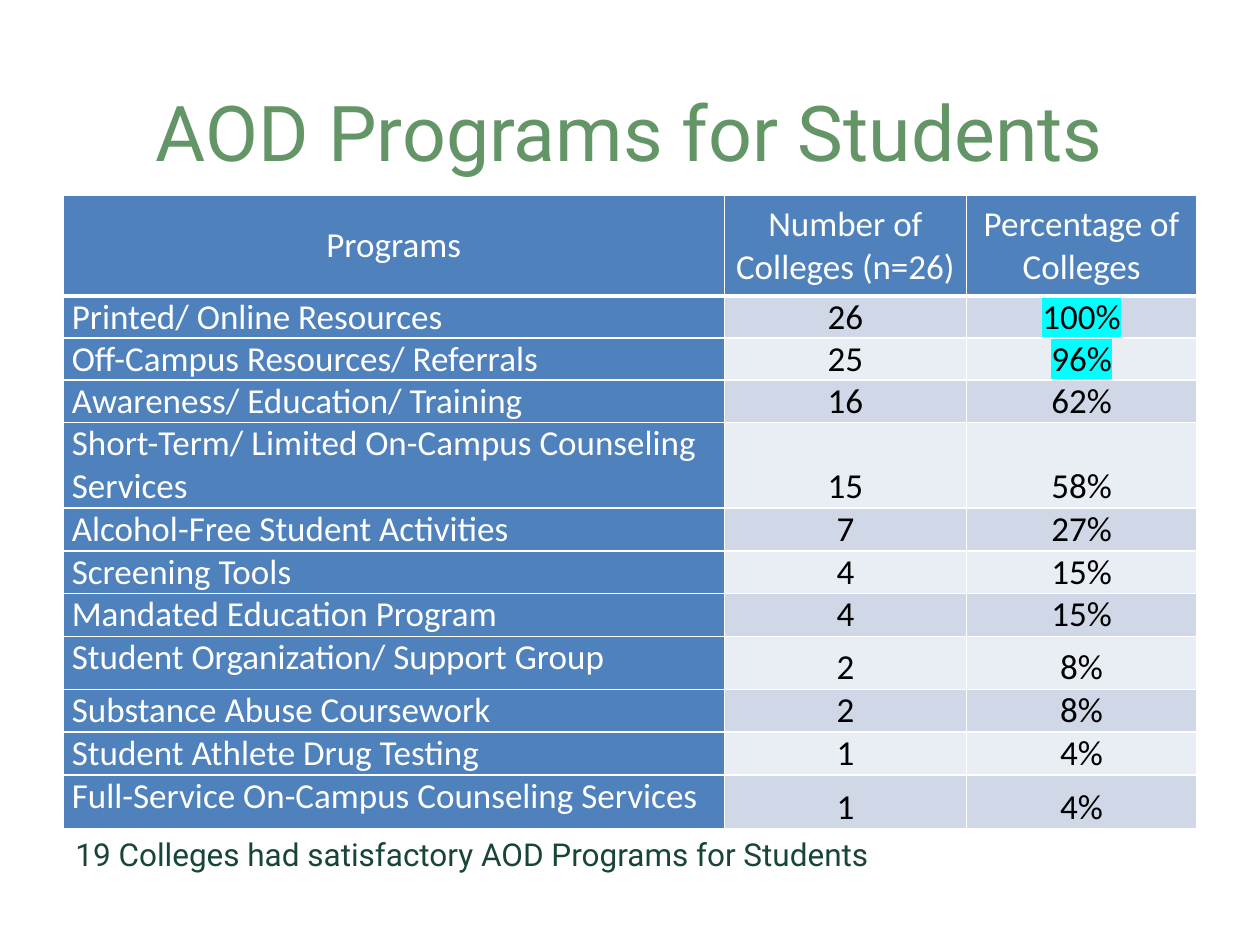
"""Build the slide on AOD programs for students."""
from dataclasses import dataclass
from itertools import product

from lxml.etree import SubElement
from pptx import Presentation
from pptx.dml.color import RGBColor
from pptx.enum.text import MSO_ANCHOR, PP_ALIGN
from pptx.oxml.ns import qn
from pptx.util import Inches, Pt

WHITE = RGBColor(0xFF, 0xFF, 0xFF)
BLACK = RGBColor(0x00, 0x00, 0x00)
BLUE = RGBColor(0x4F, 0x81, 0xBD)
BAND_DARK = RGBColor(0xD0, 0xD8, 0xE8)
BAND_LIGHT = RGBColor(0xE9, 0xED, 0xF4)
CYAN = RGBColor(0x00, 0xFF, 0xFF)
TITLE_GREEN = RGBColor(0x63, 0x95, 0x67)
NOTE_GREEN = RGBColor(0x17, 0x45, 0x3A)

MARGIN = 0.5
TABLE_TOP = 1.55
COLUMN_WIDTHS = (5.25, 1.92, 1.83)
HEADER_HEIGHT = 0.8
HEADINGS = ("Programs", "Number of Colleges (n=26)", "Percentage of Colleges")


@dataclass(frozen=True)
class TextStyle:
    font: str
    size: float
    color: RGBColor
    align: PP_ALIGN = PP_ALIGN.LEFT
    anchor: MSO_ANCHOR = MSO_ANCHOR.TOP


@dataclass(frozen=True)
class Program:
    name: str
    colleges: str
    percentage: str
    height: float = 0.34
    highlighted: bool = False


PROGRAMS = (
    Program("Printed/ Online Resources", "26", "100%", 0.3, True),
    Program("Off-Campus Resources/ Referrals", "25", "96%", 0.3, True),
    Program("Awareness/ Education/ Training", "16", "62%", 0.3),
    Program("Short-Term/ Limited On-Campus Counseling Services", "15", "58%", 0.68),
    Program("Alcohol-Free Student Activities", "7", "27%"),
    Program("Screening Tools", "4", "15%"),
    Program("Mandated Education Program", "4", "15%"),
    Program("Student Organization/ Support Group", "2", "8%", 0.42),
    Program("Substance Abuse Coursework", "2", "8%"),
    Program("Student Athlete Drug Testing", "1", "4%"),
    Program("Full-Service On-Campus Counseling Services", "1", "4%", 0.43),
)

TITLE = TextStyle("Roboto", 44, TITLE_GREEN, PP_ALIGN.CENTER, MSO_ANCHOR.MIDDLE)
NOTE = TextStyle("Roboto", 18, NOTE_GREEN)
HEADING = TextStyle("Calibri", 20, WHITE, PP_ALIGN.CENTER, MSO_ANCHOR.MIDDLE)
NAME = TextStyle("Calibri", 20, WHITE)
FIGURE = TextStyle("Calibri", 20, BLACK, PP_ALIGN.CENTER, MSO_ANCHOR.BOTTOM)


def write(text_frame, text: str, style: TextStyle):
    """Write one styled run and return it."""
    paragraph = text_frame.paragraphs[0]
    paragraph.alignment = style.align
    run = paragraph.add_run()
    run.text = text
    run.font.size = Pt(style.size)
    run.font.color.rgb = style.color
    run.font.name = style.font
    return run


def highlight(run, color: RGBColor) -> None:
    """Mark a run with a highlight colour."""
    properties = run.font._element
    marker = SubElement(properties, qn("a:highlight"))
    SubElement(marker, qn("a:srgbClr"), val=str(color))
    properties.find(qn("a:solidFill")).addnext(marker)


def add_text(slide, text: str, style: TextStyle, left: float, top: float,
             width: float, height: float) -> None:
    """Add a wrapped text box, measured in inches."""
    box = slide.shapes.add_textbox(Inches(left), Inches(top), Inches(width), Inches(height))
    box.text_frame.word_wrap = True
    box.text_frame.vertical_anchor = style.anchor
    write(box.text_frame, text, style)


def add_borders(cell, bottom_width: float) -> None:
    """Give a cell white borders."""
    properties = cell._tc.get_or_add_tcPr()
    widths = {"a:lnL": 1, "a:lnR": 1, "a:lnT": 1, "a:lnB": bottom_width}
    for tag, width in widths.items():
        line = SubElement(properties, qn(tag), w=str(Pt(width)))
        fill = SubElement(line, qn("a:solidFill"))
        SubElement(fill, qn("a:srgbClr"), val=str(WHITE))


def fill_cell(cell, text: str, style: TextStyle, fill: RGBColor, bottom_width: float = 1):
    """Format a table cell and return its run."""
    cell.margin_left = cell.margin_right = Inches(0.07)
    cell.margin_top = cell.margin_bottom = 0
    cell.vertical_anchor = style.anchor
    add_borders(cell, bottom_width)
    cell.fill.solid()
    cell.fill.fore_color.rgb = fill
    return write(cell.text_frame, text, style)


def add_program_table(slide) -> None:
    """Add the table of programs."""
    heights = (HEADER_HEIGHT, *(program.height for program in PROGRAMS))
    table = slide.shapes.add_table(
        len(heights), len(COLUMN_WIDTHS), Inches(MARGIN), Inches(TABLE_TOP),
        Inches(sum(COLUMN_WIDTHS)), Inches(sum(heights))).table
    for column, width in zip(table.columns, COLUMN_WIDTHS):
        column.width = Inches(width)
    for row, height in zip(table.rows, heights):
        row.height = Inches(height)
    for column, heading in enumerate(HEADINGS):
        fill_cell(table.cell(0, column), heading, HEADING, BLUE, bottom_width=3)
    for (index, program), column in product(enumerate(PROGRAMS), range(len(HEADINGS))):
        text = (program.name, program.colleges, program.percentage)[column]
        band = BAND_LIGHT if index % 2 else BAND_DARK
        style, fill = (FIGURE, band) if column else (NAME, BLUE)
        run = fill_cell(table.cell(index + 1, column), text, style, fill)
        if program.highlighted and column == 2:
            highlight(run, CYAN)


def main() -> None:
    """Build and save the presentation."""
    presentation = Presentation()
    presentation.slide_width, presentation.slide_height = Inches(10), Inches(7.5)
    slide = presentation.slides.add_slide(presentation.slide_layouts[6])
    add_text(slide, "AOD Programs for Students", TITLE, MARGIN, 0.41, 9, 1.25)
    add_program_table(slide)
    add_text(slide, "19 Colleges had satisfactory AOD Programs for Students", NOTE,
             MARGIN, 6.58, 6.89, 0.4)
    presentation.save("out.pptx")


if __name__ == "__main__":
    main()
